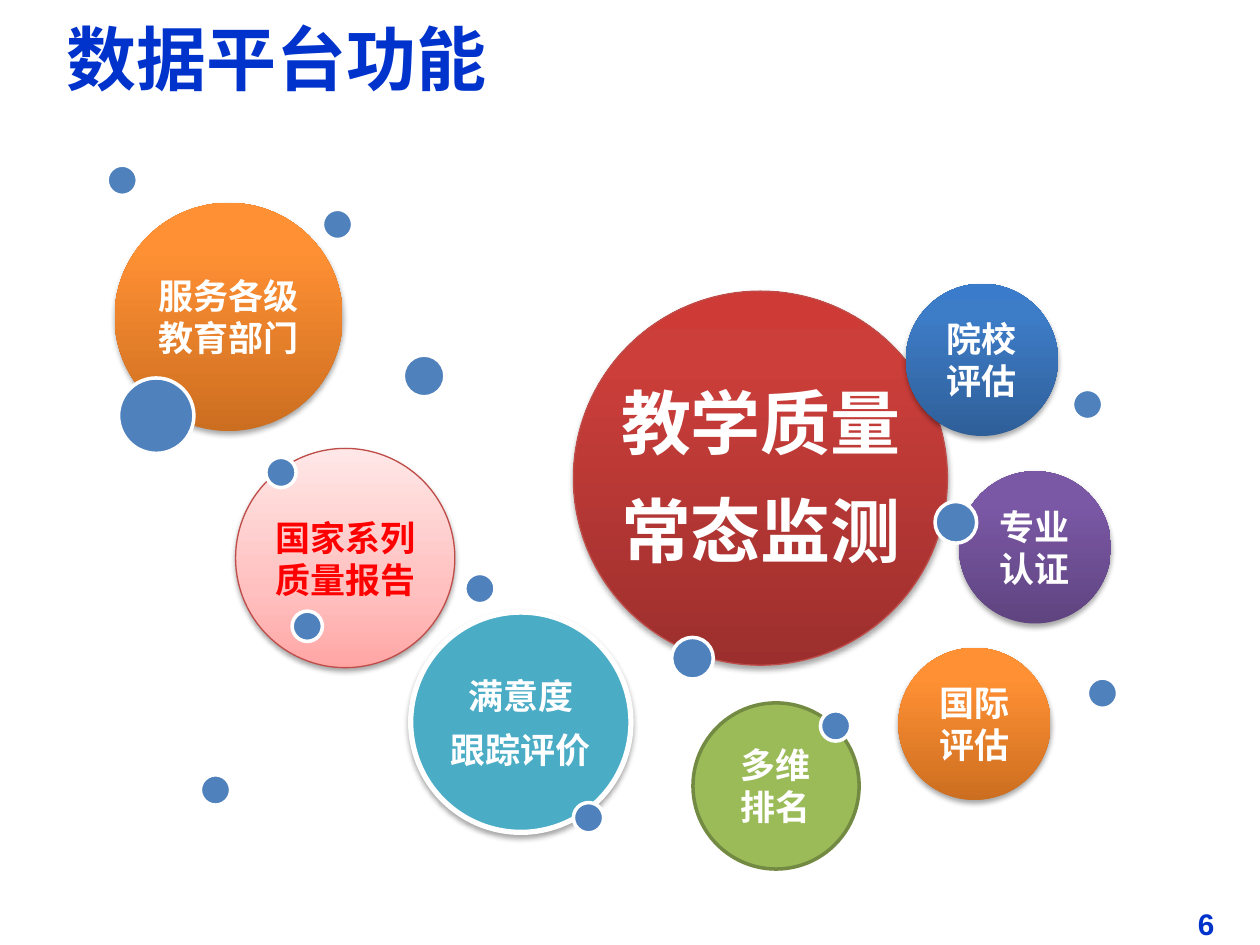
"""Build the slide of bubbles that shows what the data platform does."""
import copy

import pptx
import pptx.dml.color
import pptx.enum.shapes
import pptx.enum.text
import pptx.oxml
import pptx.oxml.ns
import pptx.util
from pptx.util import Cm, Pt

BODY_FONT = "Noto Sans CJK SC"
SHADOW = (
    '<a:outerShdw xmlns:a="http://schemas.openxmlformats.org/drawingml/2006/main" '
    'blurRad="39370" dist="22860" dir="5400000" rotWithShape="0">'
    '<a:srgbClr val="000000"><a:alpha val="35000"/></a:srgbClr></a:outerShdw>'
)
ORANGE = ["CC6E20", "FF9034", "FF9136"]


def rgb(value):
    return pptx.dml.color.RGBColor.from_string(value)


def write(shape, lines, size, color, font_name, align=None, line_spacing=None, space_after=None):
    for index, line in enumerate(lines):
        frame = shape.text_frame
        paragraph = frame.add_paragraph() if index else frame.paragraphs[0]
        paragraph.text = line
        paragraph.alignment = align
        paragraph.line_spacing = line_spacing
        paragraph.space_after = space_after
        paragraph.font.name = font_name
        paragraph.font.size = Pt(size)
        paragraph.font.bold = True
        paragraph.font.color.rgb = rgb(color)


presentation = pptx.Presentation()
presentation.slide_width = Cm(25.4)
presentation.slide_height = Cm(19.05)
slide = presentation.slides.add_slide(presentation.slide_layouts[6])
center = pptx.enum.text.PP_ALIGN.CENTER
middle = pptx.enum.text.MSO_ANCHOR.MIDDLE
oval = pptx.enum.shapes.MSO_SHAPE.OVAL

number = slide.shapes.add_textbox(Cm(23.9), Cm(18.14), Cm(1.5), Cm(0.99))
write(number, ["6"], 17, "0033CC", "Arial")

title = slide.shapes.add_textbox(Cm(1.09), Cm(0.18), Cm(21.44), Cm(1.96))
title.text_frame.word_wrap = True
title.text_frame.vertical_anchor = middle
write(title, ["数据平台功能"], 40, "0033CC", "Arial Narrow")

bubbles = [
    (2.31, 4.09, 4.6, ORANGE, 80, None, 0, "FFFFFF", ["服务各级教育部门"]),
    (4.75, 9.04, 4.42, ["FFA6A5", "FFC0BF", "FFE7E7"], 35, "BF4C48", 0.75, "FF0000", ["国家系列质量报告"]),
    (11.56, 5.87, 7.54, ["9C2F2D", "CB3E3A", "CE3B37"], 80, "BF4C48", 0.75, "FFFFFF", []),
    (18.26, 5.72, 3.07, ["2F5F99", "3D7CC7", "3A7CCB"], 80, None, 0, "FFFFFF", ["院校评估"]),
    (19.33, 9.5, 3.07, ["5F4480", "7B58A6", "7C57A8"], 80, None, 0, "FFFFFF", ["专业认证"]),
    (18.11, 13.06, 3.07, ORANGE, 80, None, 0, "FFFFFF", ["国际评估"]),
    (13.97, 14.17, 3.35, ["9BBB59"], None, "738A42", 2, "FFFFFF", ["多维排名"]),
    (8.28, 12.34, 4.44, ["4BACC6"], None, "FFFFFF", 3, "FFFFFF", ["满意度", "跟踪评价"]),
]
for left, top, diameter, colors, middle_stop, line_color, line_width, text_color, lines in bubbles:
    bubble = slide.shapes.add_shape(oval, Cm(left), Cm(top), Cm(diameter), Cm(diameter))
    bubble.shadow.inherit = False
    if line_color:
        bubble.line.color.rgb = rgb(line_color)
        bubble.line.width = Pt(line_width)
    else:
        bubble.line.fill.background()
    if len(colors) == 1:
        bubble.fill.solid()
        bubble.fill.fore_color.rgb = rgb(colors[0])
    else:
        bubble.fill.gradient()
        bubble.fill.gradient_angle = 90
        stop_list = bubble._element.spPr.find(".//" + pptx.oxml.ns.qn("a:gsLst"))
        stop_list.append(copy.deepcopy(stop_list[-1]))
        for stop, color, position in zip(bubble.fill.gradient_stops, colors, (0, middle_stop, 100)):
            stop.color.rgb = rgb(color)
            stop.position = position / 100
    if colors != ["9BBB59"]:
        effects = bubble._element.spPr.find(pptx.oxml.ns.qn("a:effectLst"))
        effects.append(pptx.oxml.parse_xml(SHADOW))
    frame = bubble.text_frame
    frame.word_wrap = True
    frame.vertical_anchor = middle
    margin = Cm(max(0, 0.74 - 0.146 * diameter))
    frame.margin_left = frame.margin_right = frame.margin_top = frame.margin_bottom = margin
    write(bubble, lines, 20, text_color, BODY_FONT, center, Pt(24), Pt(7))

dots = {
    0.61: [
        (21.62, 7.85), (21.92, 13.67), (5.36, 9.22), (9.37, 11.56), (5.89, 12.32),
        (6.5, 4.22), (2.16, 3.33), (4.04, 15.62), (11.56, 16.18), (16.54, 14.33),
    ],
    0.84: [(13.54, 12.85), (8.13, 7.16), (18.85, 10.11)],
    1.52: [(2.39, 7.62)],
}
for diameter, places in dots.items():
    for left, top in places:
        dot = slide.shapes.add_shape(oval, Cm(left), Cm(top), Cm(diameter), Cm(diameter))
        dot.shadow.inherit = False
        dot.fill.solid()
        dot.fill.fore_color.rgb = rgb("4F81BD")
        dot.line.color.rgb = rgb("FFFFFF")
        dot.line.width = Pt(2)

monitoring = slide.shapes.add_textbox(Cm(8.99), Cm(7.52), Cm(12.7), Cm(4.27))
monitoring.text_frame.word_wrap = True
write(monitoring, ["教学质量", "常态监测"], 40, "FFFFFF", BODY_FONT, center, Pt(48), Pt(14))

presentation.save("out.pptx")
